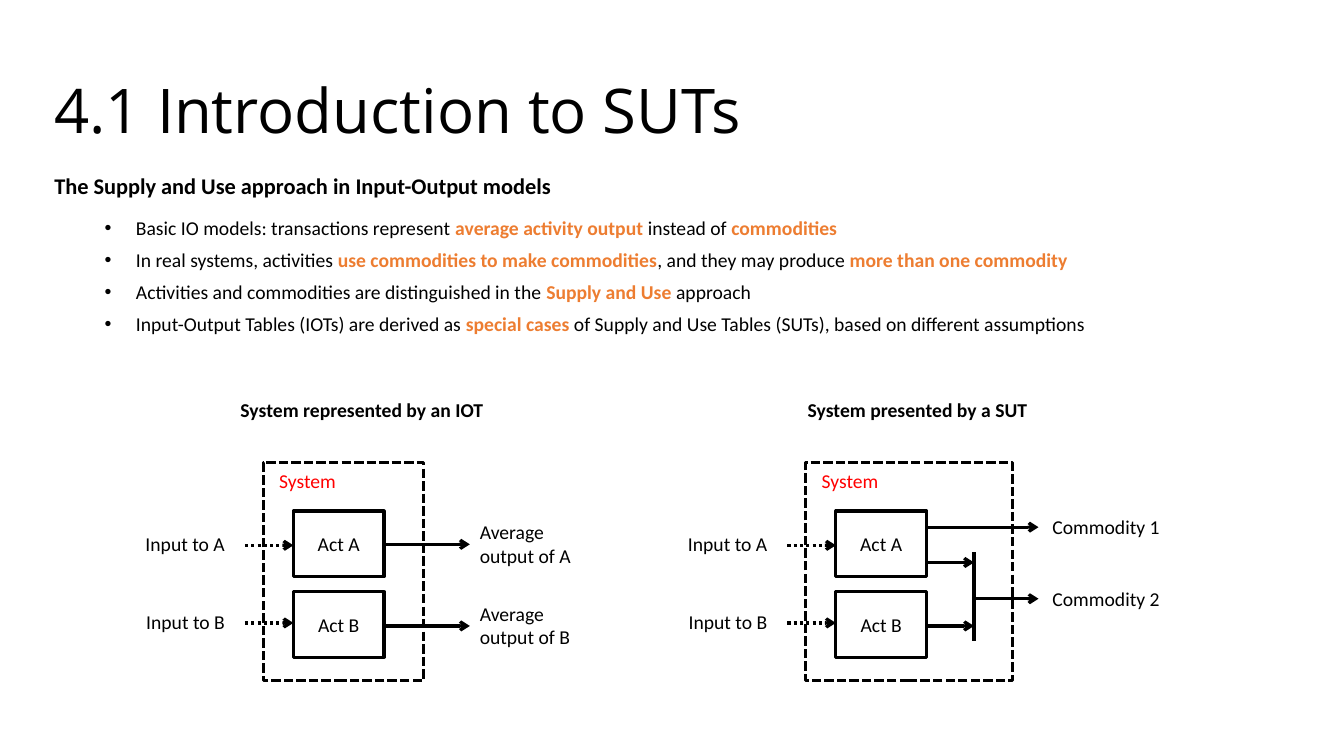
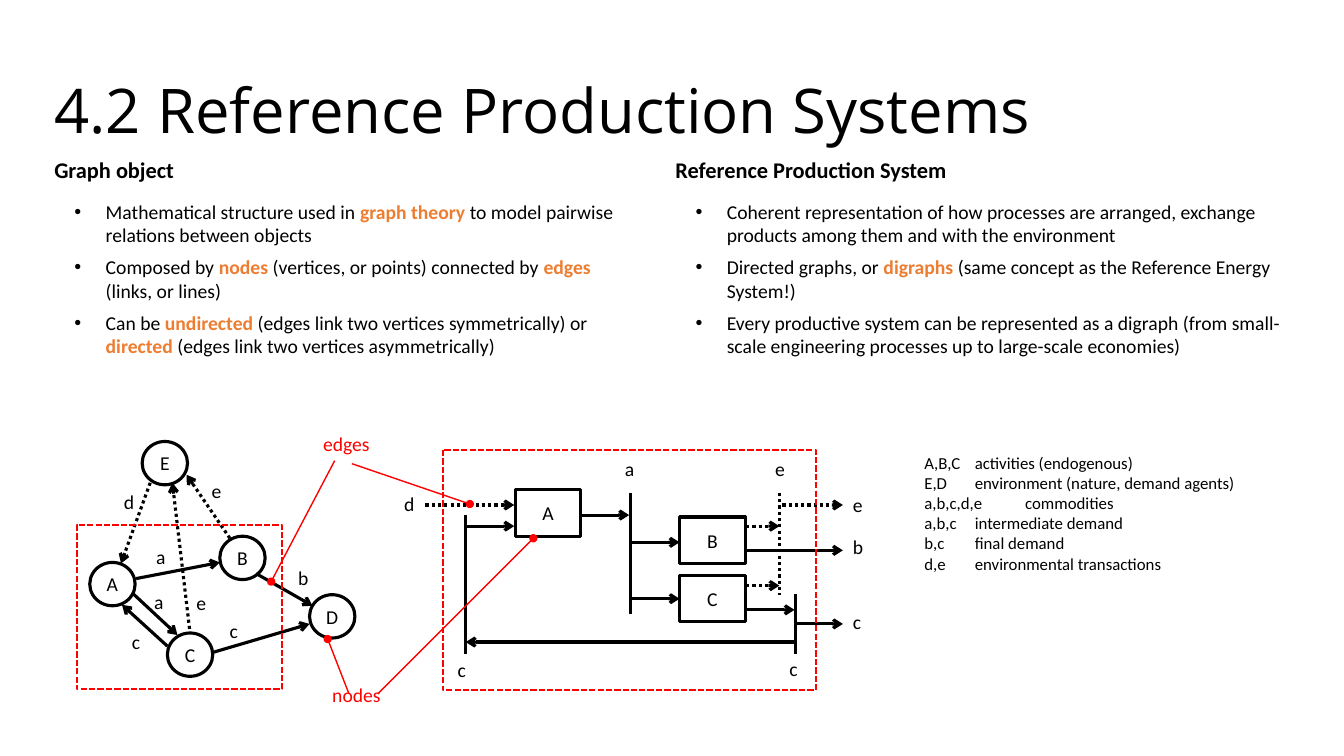
from dataclasses import dataclass

from lxml.etree import SubElement
from pptx import Presentation
from pptx.dml.color import RGBColor
from pptx.enum.dml import MSO_LINE
from pptx.enum.shapes import MSO_CONNECTOR, MSO_SHAPE
from pptx.enum.text import MSO_ANCHOR as ANCHOR, PP_ALIGN as ALIGN
from pptx.oxml.ns import qn
from pptx.util import Inches, Pt


@dataclass(frozen=True)
class Theme:
    ink: RGBColor = RGBColor(0, 0, 0)
    accent: RGBColor = RGBColor(0xED, 0x7D, 0x31)
    mark: RGBColor = RGBColor(0xFF, 0, 0)
    title_font: str = "Open Sans"
    body_font: str = "Calibri"
    title_size: Pt = Pt(44)
    heading_size: Pt = Pt(16)
    body_size: Pt = Pt(14)
    legend_size: Pt = Pt(12)
    gap: Pt = Pt(6)
    flow_width: Pt = Pt(2.25)
    border_width: Pt = Pt(1.5)
    pointer_width: Pt = Pt(1)


theme = Theme()
DOTTED, DASHED = MSO_LINE.ROUND_DOT, MSO_LINE.SQUARE_DOT
BODY = {"name": theme.body_font, "size": theme.body_size, "bold": False}
STRONG = {**BODY, "bold": True}
HEADING = {**STRONG, "size": theme.heading_size}
LEGEND = {**BODY, "size": theme.legend_size}
TITLE = {"name": theme.title_font, "size": theme.title_size}


def place(slide, at, text="", style=BODY, color=theme.ink, align=ALIGN.LEFT,
          outline=None, width=theme.flow_width, dash=None, bullets=None):
    box = [Inches(length) for length in at]
    if outline is None:
        holder = slide.shapes.add_textbox(*box)
    else:
        holder = slide.shapes.add_shape(outline, *box)
        holder.shadow.inherit = False
        holder.fill.background()
        holder.line.color.rgb = color
        holder.line.width = width
        holder.line.dash_style = dash
    frame = holder.text_frame
    frame.word_wrap = True
    if outline is not None:
        frame.vertical_anchor = ANCHOR.MIDDLE
        frame.margin_left = frame.margin_right = 0
        align = ALIGN.CENTER
    for index, line in enumerate(text.split("\n") if text else []):
        paragraph = frame.paragraphs[0] if index == 0 else frame.add_paragraph()
        paragraph.alignment = align
        formats = style
        if bullets and index == 0:
            paragraph.space_after = theme.gap
        elif bullets:
            formats = BODY
            properties = paragraph._p.get_or_add_pPr()
            properties.set("marL", str(Inches(bullets)))
            properties.set("indent", str(Inches(-0.31)))
            SubElement(properties, qn("a:buFont"), typeface="Arial")
            SubElement(properties, qn("a:buChar"), char="•")
            paragraph.space_before = theme.gap
        for part, words in enumerate(line.split("*")):
            if not words:
                continue
            run = paragraph.add_run()
            run.text = words
            for key, value in formats.items():
                setattr(run.font, key, value)
            run.font.color.rgb = color
            if part % 2:
                run.font.bold = True
                run.font.color.rgb = theme.accent
    return frame


def connect(slide, start, end, dash=None, color=theme.ink, width=theme.flow_width,
            head=None, tail="arrow"):
    ends = [Inches(length) for length in (*start, *end)]
    link = slide.shapes.add_connector(MSO_CONNECTOR.STRAIGHT, *ends)
    link.line.color.rgb = color
    link.line.width = width
    link.line.dash_style = dash
    properties = link._element.spPr
    stroke = properties.find(qn("a:ln"))
    for tag, kind in (("a:headEnd", head), ("a:tailEnd", tail)):
        if kind:
            SubElement(stroke, qn(tag), type=kind)
    SubElement(properties, qn("a:effectLst"))


deck = Presentation()
deck.slide_width, deck.slide_height = Inches(13.33), Inches(7.5)

slides = []
for title in ("4.1 Introduction to SUTs", "4.2 Reference Production Systems"):
    slide = deck.slides.add_slide(deck.slide_layouts[6])
    heading = place(slide, (0.44, 0.01, 11.33, 1.5), title, TITLE)
    heading.vertical_anchor = ANCHOR.BOTTOM
    heading.paragraphs[0].line_spacing = 0.9
    slides.append(slide)
intro, graphs = slides

topics = [
    (intro, (0.44, 1.66, 12.27, 1.73), 0.81, [
        "The Supply and Use approach in Input-Output models",
        "Basic IO models: transactions represent *average activity output *instead of *commodities*",
        "In real systems, activities *use commodities to make commodities*, and they may produce "
        "*more than one commodity*",
        "Activities and commodities are distinguished in the *Supply and Use *approach",
        "Input-Output Tables (IOTs) are derived as *special cases *of Supply and Use Tables (SUTs), "
        "based on different assumptions",
    ]),
    (graphs, (0.44, 1.5, 5.88, 2.12), 0.51, [
        "Graph object",
        "Mathematical structure used in *graph theory *to model pairwise relations between objects",
        "Composed by *nodes* (vertices, or points) connected by *edges* (links, or lines)",
        "Can be *undirected* (edges link two vertices symmetrically) or *directed* "
        "(edges link two vertices asymmetrically)",
    ]),
    (graphs, (6.6, 1.5, 6.35, 2.12), 0.51, [
        "Reference Production System",
        "Coherent representation of how processes are arranged, exchange products among them "
        "and with the environment",
        "Directed graphs, or *digraphs* (same concept as the Reference Energy System!)",
        "Every productive system can be represented as a digraph (from small-scale engineering "
        "processes up to large-scale economies)",
    ]),
]
for slide, area, indent, lines in topics:
    place(slide, area, "\n".join(lines), HEADING, bullets=indent)

systems = [
    ("System represented by an IOT", 3.59, 2.61, 1.59),
    ("System presented by a SUT", 9.1, 7.99, 2.05),
]
for caption, center, left, width in systems:
    place(intro, (center - 1.7, 3.9, 3.4, 0.34), caption, STRONG, align=ALIGN.CENTER)
    place(intro, (left, 4.59, width, 2.16), outline=MSO_SHAPE.RECTANGLE, dash=DASHED)
    place(intro, (left + 0.06, 4.6, 0.99, 0.34), "System", color=theme.mark)
    for row, name in enumerate("AB"):
        place(intro, (left + 0.3, 5.07 + 0.8 * row, 0.9, 0.65), f"Act {name}",
              outline=MSO_SHAPE.RECTANGLE)
        place(intro, (left - 1.46, 5.23 + 0.77 * row, 1.18, 0.34), f"Input to {name}",
              align=ALIGN.RIGHT)
        input_y = 5.41 + 0.77 * row
        connect(intro, (left - 0.18, input_y), (left + 0.3, input_y), DOTTED)

for row, name in enumerate("AB"):
    output_y = 5.4 + 0.81 * row
    connect(intro, (3.81, output_y), (4.66, output_y))
    place(intro, (4.66, output_y - 0.29, 1.22, 0.57), f"Average output of {name}")

for start_x, end_x, y in [(9.18, 10.3, 5.23), (9.18, 9.66, 5.58),
                          (9.18, 9.66, 6.21), (9.66, 10.3, 5.94)]:
    connect(intro, (start_x, y), (end_x, y))
connect(intro, (9.66, 5.48), (9.66, 6.36), tail=None)
for row in range(2):
    place(intro, (10.34, 5.06 + 0.71 * row, 1.37, 0.34), f"Commodity {row + 1}")

vertices = [("A", 0.89, 5.58), ("B", 2.18, 5.32), ("C", 1.66, 6.28),
            ("D", 3.07, 5.9), ("E", 1.41, 4.38)]
for name, x, y in vertices:
    place(graphs, (x, y, 0.45, 0.43), name, outline=MSO_SHAPE.OVAL)

processes = [("A", 5.11, 4.86), ("B", 6.74, 5.13), ("C", 6.74, 5.71)]
for name, x, y in processes:
    place(graphs, (x, y, 0.65, 0.46), name, outline=MSO_SHAPE.RECTANGLE)

edges = [
    ((1.32, 5.89), (1.76, 6.3), None),
    ((1.35, 5.74), (2.18, 5.58), None),
    ((1.66, 6.41), (1.21, 6), None),
    ((2.12, 6.47), (3.07, 6.19), None),
    ((2.54, 5.69), (3.1, 6.01), None),
    ((1.49, 4.79), (1.2, 5.59), DOTTED),
    ((2.28, 5.34), (1.85, 4.71), DOTTED),
    ((1.88, 6.24), (1.71, 4.79), DOTTED),
]
for start, end, dash in edges:
    connect(graphs, start, end, dash)

flows = [
    (4.22, 5.1, 5.01, DOTTED), (4.62, 5.1, 5.22, None), (5.75, 6.24, 5.11, None),
    (6.25, 6.74, 5.38, None), (6.25, 6.74, 5.94, None), (7.4, 8.36, 5.46, None),
    (7.4, 7.88, 6.05, None), (7.88, 8.36, 6.19, None), (7.88, 4.62, 6.37, None),
    (7.4, 7.73, 5.22, DOTTED), (7.4, 7.73, 5.81, DOTTED), (7.76, 8.36, 5.01, DOTTED),
]
for start_x, end_x, y, dash in flows:
    connect(graphs, (start_x, y), (end_x, y), dash)

markets = [(4.62, 5.11, 6.49, None), (6.25, 4.89, 6.09, None),
           (7.73, 4.89, 5.9, DOTTED), (7.89, 5.89, 6.49, None)]
for x, top, bottom, dash in markets:
    connect(graphs, (x, top), (x, bottom), dash, tail=None)

commodities = [
    ("a", 1.43, 5.8), ("a", 1.45, 5.36), ("c", 1.21, 6.2), ("d", 1.13, 4.81),
    ("b", 2.86, 5.57), ("c", 2.18, 6.09), ("e", 1.85, 5.81), ("e", 2, 4.7),
    ("d", 3.91, 4.83), ("a", 6.1, 4.48), ("e", 7.59, 4.48), ("e", 8.36, 4.84),
    ("b", 8.36, 5.26), ("c", 8.36, 6), ("c", 4.44, 6.48), ("c", 7.73, 6.47),
]
for name, x, y in commodities:
    place(graphs, (x, y, 0.4, 0.34), name)

for boundary in [(0.76, 5.21, 2.04, 1.63), (4.39, 4.46, 3.7, 2.39)]:
    place(graphs, boundary, outline=MSO_SHAPE.RECTANGLE, color=theme.mark,
          width=theme.border_width, dash=DASHED)

callouts = [
    ("nodes", 2.89, 6.73, [((3.25, 6.34), (3.46, 6.88)), ((5.29, 5.34), (3.75, 6.88))]),
    ("edges", 2.79, 4.24, [((2.69, 5.77), (3.32, 4.57)), ((4.66, 5), (3.49, 4.6))]),
]
for name, x, y, pointers in callouts:
    place(graphs, (x, y, 1.29, 0.34), name, color=theme.mark, align=ALIGN.CENTER)
    for target, origin in pointers:
        connect(graphs, target, origin, color=theme.mark, width=theme.pointer_width,
                head="oval", tail=None)

legend = [
    ("A,B,C", "activities (endogenous)"),
    ("E,D", "environment (nature, demand agents)"),
    ("a,b,c,d,e", "commodities"),
    ("a,b,c", "intermediate demand"),
    ("b,c", "final demand"),
    ("d,e", "environmental transactions"),
]
place(graphs, (9.07, 4.44, 4.13, 1.31), "\n".join("\t".join(entry) for entry in legend), LEGEND)

deck.save("out.pptx")
